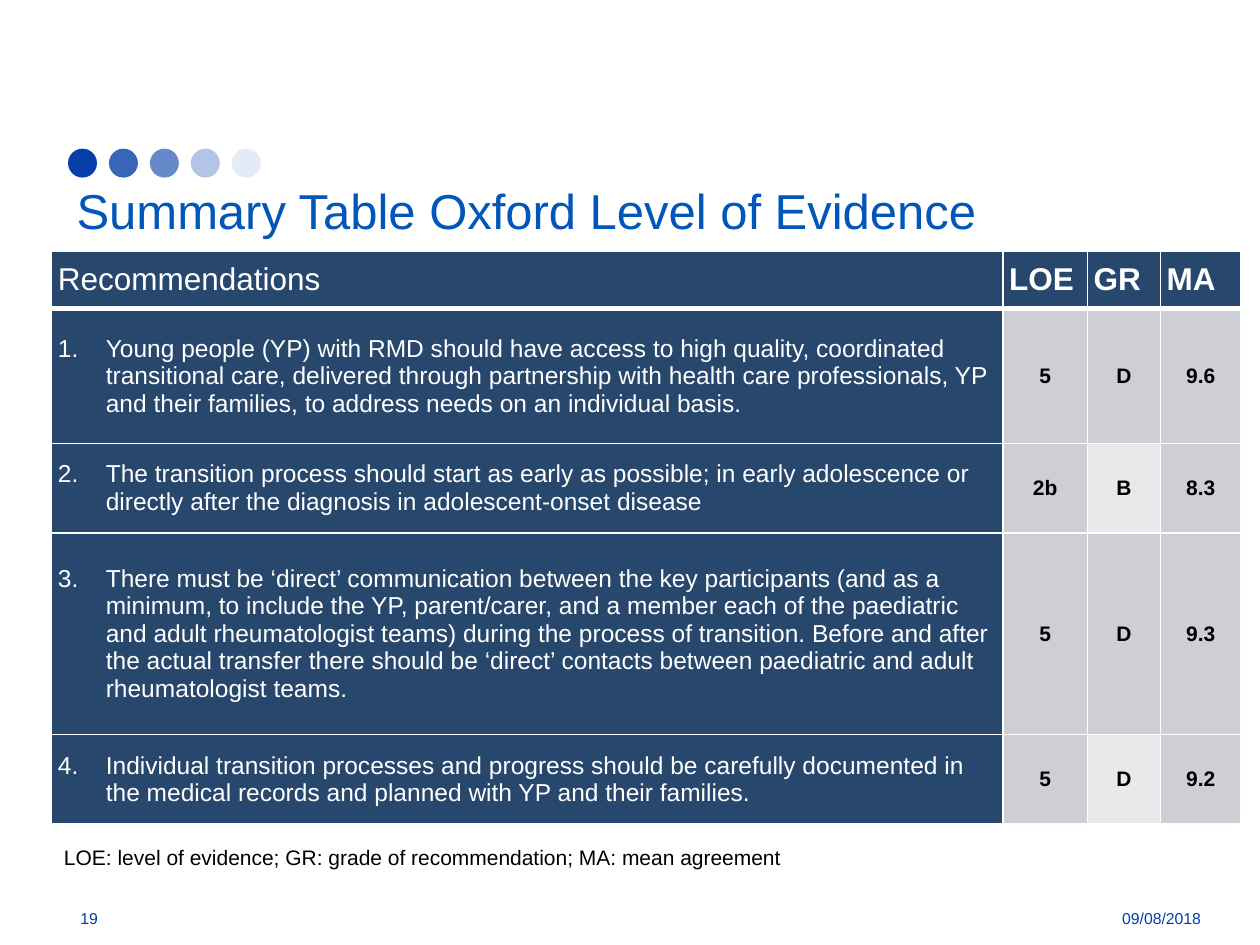
from pptx import Presentation
from pptx.dml.color import RGBColor
from pptx.enum import shapes, text
from pptx.oxml.ns import qn
from pptx.util import Inches, Pt
from lxml import etree

WHITE = RGBColor(0xFF, 0xFF, 0xFF)
BLACK = RGBColor(0, 0, 0)
DOT = RGBColor(0x06, 0x3F, 0xA9)
TITLE = RGBColor(0x00, 0x56, 0xB9)
FOOT = RGBColor(0x00, 0x3F, 0xA8)
NAVY = RGBColor(0x28, 0x47, 0x6D)
GREY = RGBColor(0xCD, 0xCF, 0xD4)
PALE = RGBColor(0xE8, 0xE9, 0xEB)

LEFT, MID = text.PP_ALIGN.LEFT, text.PP_ALIGN.CENTER
COLS = (7.55, 0.67, 0.58, 0.64)
ROWS = (0.46, 1.07, 0.71, 1.6, 0.71)
HEAD = ("Recommendations", "LOE", "GR", "MA")
DATA = (
    ("Young people (YP) with RMD should have access to high quality, coordinated "
     "transitional care, delivered through partnership with health care professionals, "
     "YP and their families, to address needs on an individual basis.", "5", "D", "9.6"),
    ("The transition process should start as early as possible; in early adolescence "
     "or directly after the diagnosis in adolescent-onset disease", "2b", "B", "8.3"),
    ("There must be ‘direct’ communication between the key participants (and as a "
     "minimum, to include the YP, parent/carer, and a member each of the paediatric and "
     "adult rheumatologist teams) during the process of transition. Before and after the "
     "actual transfer there should be ‘direct’ contacts between paediatric and adult "
     "rheumatologist teams.", "5", "D", "9.3"),
    ("Individual transition processes and progress should be carefully documented in "
     "the medical records and planned with YP and their families.", "5", "D", "9.2"),
)


def add(parent, tag, **attrs):
    return etree.SubElement(parent, qn(tag), attrs)


def style(para, size, color, bold=False, align=LEFT):
    para.alignment = align
    for run in para.runs:
        font = run.font
        font.name, font.size, font.bold = "Arial", Pt(size), bold
        font.color.rgb = color


def label(slide, box, words, size, color, align=LEFT,
          anchor=text.MSO_ANCHOR.TOP, wrap=True):
    frame = slide.shapes.add_textbox(*map(Inches, box)).text_frame
    frame.word_wrap = wrap
    frame.vertical_anchor = anchor
    frame.text = words
    style(frame.paragraphs[0], size, color, align=align)


def dots(slide, box):
    left, top, width, size = box
    alphas = (100, 80, 61, 30, 10)
    step = (width - size) / (len(alphas) - 1)
    for i, alpha in enumerate(alphas):
        dot = slide.shapes.add_shape(
            shapes.MSO_SHAPE.OVAL, Inches(left + i * step), Inches(top),
            Inches(size), Inches(size))
        dot.shadow.inherit = False
        dot.line.fill.background()
        dot.fill.solid()
        dot.fill.fore_color.rgb = DOT
        if alpha < 100:
            color = dot.fill._xPr.find(qn("a:solidFill"))[0]
            add(color, "a:alpha", val=str(alpha * 1000))


def edge(cell, head, below):
    props = cell._tc.get_or_add_tcPr()
    widths = {"L": 1, "R": 1, "T": 3 if below else 1, "B": 3 if head else 1}
    for i, (side, width) in enumerate(widths.items()):
        line = etree.Element(qn("a:ln" + side), w=str(Pt(width)))
        fill = add(line, "a:solidFill")
        add(fill, "a:srgbClr", val=str(WHITE))
        props.insert(i, line)


def number(para, start):
    props = para._p.get_or_add_pPr()
    indent = Inches(0.38)
    props.set("marL", str(indent))
    props.set("indent", str(-indent))
    add(props, "a:buFont", typeface="+mj-lt")
    add(props, "a:buAutoNum", type="arabicPeriod", startAt=str(start))


def grid(slide, box):
    frame = slide.shapes.add_table(len(ROWS), len(COLS), *map(Inches, box))
    table = frame.table
    for col, width in zip(table.columns, COLS):
        col.width = Inches(width)
    for row, height in zip(table.rows, ROWS):
        row.height = Inches(height)
    for r, words in enumerate((HEAD,) + DATA):
        for c, word in enumerate(words):
            cell = table.cell(r, c)
            cell.margin_left = cell.margin_right = Inches(0.05)
            cell.margin_top = cell.margin_bottom = 0
            cell.vertical_anchor = text.MSO_ANCHOR.MIDDLE
            cell.fill.solid()
            cell.text = word
            para = cell.text_frame.paragraphs[0]
            if r == 0:
                fill = NAVY
                style(para, 18, WHITE, bold=c > 0)
            elif c == 0:
                fill = NAVY
                number(para, r)
                style(para, 14, WHITE)
            else:
                fill = PALE if c == 2 and r % 2 == 0 else GREY
                style(para, 12, BLACK, True, MID)
            cell.fill.fore_color.rgb = fill
            edge(cell, r == 0, r == 1)


def footer(slide, box):
    left, top, width, height = box
    mid = text.MSO_ANCHOR.MIDDLE
    label(slide, (left, top, 0.96, height), "19", 9, FOOT, anchor=mid)
    label(slide, (left + width - 1.34, top, 1.34, height), "09/08/2018", 9, FOOT,
          text.PP_ALIGN.RIGHT, mid)


def main():
    deck = Presentation()
    deck.slide_width, deck.slide_height = Inches(10), Inches(7.5)
    slide = deck.slides.add_slide(deck.slide_layouts[6])
    dots(slide, (0.54, 1.18, 1.53, 0.23))
    label(slide, (0.51, 1.38, 9.11, 0.69), "Summary Table Oxford Level of Evidence",
          28, TITLE)
    footer(slide, (0.54, 7.09, 9.09, 0.4))
    grid(slide, (0.41, 1.99, sum(COLS), sum(ROWS)))
    label(slide, (0.41, 6.65, 5.94, 0.3),
          "LOE: level of evidence; GR: grade of recommendation; MA: mean agreement",
          12, BLACK, wrap=False)
    deck.save("out.pptx")


if __name__ == "__main__":
    main()
